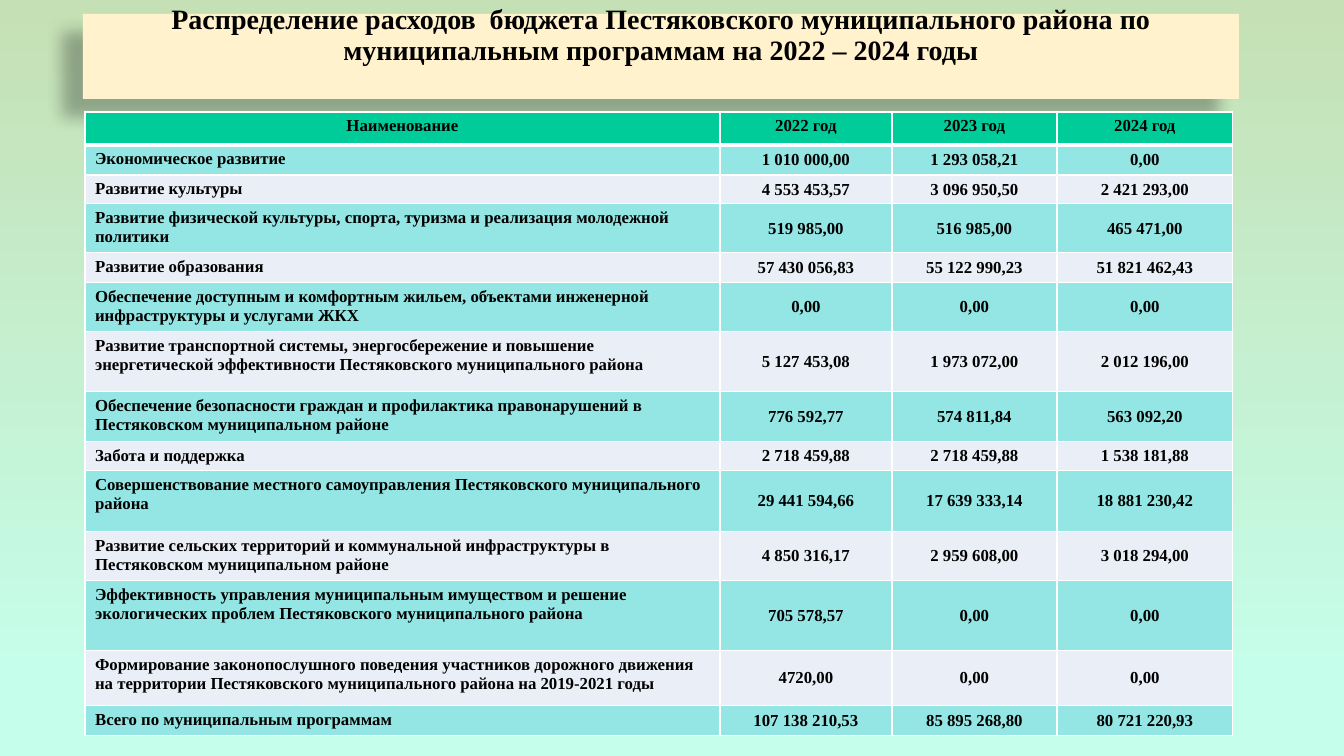
from lxml.etree import SubElement
from pptx import Presentation
from pptx.dml.color import RGBColor
from pptx.enum.shapes import MSO_SHAPE
from pptx.enum.text import MSO_ANCHOR, PP_ALIGN
from pptx.oxml.ns import qn
from pptx.util import Pt

SLIDE_W, SLIDE_H = 1344, 756
SCALE = 12192000 / SLIDE_W

FONT = {"name": "Times New Roman", "bold": True}
TITLE_FONT = {**FONT, "size": Pt(20)}
CELL_FONT = {**FONT, "size": Pt(12)}
TITLE_FORMAT = {"alignment": PP_ALIGN.CENTER, "line_spacing": 0.9}
NAME_FORMAT = {"alignment": PP_ALIGN.LEFT}
CENTER_FORMAT = {"alignment": PP_ALIGN.CENTER}

HEADER_FILL, ODD_FILL, EVEN_FILL = "00CC99", "94E6E4", "EAEFF7"

TITLE = ("Распределение расходов  бюджета Пестяковского муниципального района "
         "по муниципальным программам на 2022 – 2024 годы")

COL_WIDTHS = [635, 172, 165, 176]
# Row height in px, then the cell texts
ROWS = [
    (33, "Наименование", "2022 год", "2023 год", "2024 год"),
    (30, "Экономическое развитие", "1 010 000,00", "1 293 058,21", "0,00"),
    (29, "Развитие культуры", "4 553 453,57", "3 096 950,50", "2 421 293,00"),
    (49, "Развитие физической культуры, спорта, туризма и реализация молодежной политики",
     "519 985,00", "516 985,00", "465 471,00"),
    (30, "Развитие образования", "57 430 056,83", "55 122 990,23", "51 821 462,43"),
    (49, "Обеспечение доступным и комфортным жильем, объектами инженерной "
         "инфраструктуры и услугами ЖКХ", "0,00", "0,00", "0,00"),
    (60, "Развитие транспортной системы, энергосбережение и повышение энергетической "
         "эффективности Пестяковского муниципального района",
     "5 127 453,08", "1 973 072,00", "2 012 196,00"),
    (50, "Обеспечение безопасности граждан и профилактика правонарушений в "
         "Пестяковском муниципальном районе", "776 592,77", "574 811,84", "563 092,20"),
    (29, "Забота и поддержка", "2 718 459,88", "2 718 459,88", "1 538 181,88"),
    (61, "Совершенствование местного самоуправления Пестяковского муниципального района",
     "29 441 594,66", "17 639 333,14", "18 881 230,42"),
    (49, "Развитие сельских территорий и коммунальной инфраструктуры в "
         "Пестяковском муниципальном районе", "4 850 316,17", "2 959 608,00", "3 018 294,00"),
    (70, "Эффективность управления муниципальным имуществом и решение экологических "
         "проблем Пестяковского муниципального района", "705 578,57", "0,00", "0,00"),
    (55, "Формирование законопослушного поведения участников дорожного движения на "
         "территории Пестяковского муниципального района на 2019-2021 годы",
     "4720,00", "0,00", "0,00"),
    (30, "Всего по муниципальным программам",
     "107 138 210,53", "85 895 268,80", "80 721 220,93"),
]


def px(n):
    return round(n * SCALE)


def color(hex_code):
    return RGBColor.from_string(hex_code)


def apply(target, values):
    for name, value in values.items():
        setattr(target, name, value)


def write(tf, text, para_format, font_format):
    p = tf.paragraphs[0]
    apply(p, para_format)
    r = p.add_run()
    r.text = text
    apply(r.font, font_format)
    r.font.color.rgb = color("000000")


def set_background(s):
    fill = s.background.fill
    fill.gradient()
    fill.gradient_angle = 270
    for stop, (position, code) in zip(fill.gradient_stops, [(0, "C5E0B4"), (0.93, "C5FFEC")]):
        stop.position = position
        stop.color.rgb = color(code)


def add_shadow(sp, blur, dist, angle, alpha):
    sp.shadow.inherit = False
    effects = sp._element.spPr.find(qn("a:effectLst"))
    shadow = SubElement(effects, qn("a:outerShdw"), blurRad=str(Pt(blur)), dist=str(Pt(dist)),
                        dir=str(angle * 60000), algn="ctr", rotWithShape="0")
    clr = SubElement(shadow, qn("a:srgbClr"), val="000000")
    SubElement(clr, qn("a:alpha"), val=str(alpha * 1000))


def add_title(s, x, y, w, h):
    sp = s.shapes.add_shape(MSO_SHAPE.RECTANGLE, px(x), px(y), px(w), px(h))
    sp.fill.solid()
    sp.fill.fore_color.rgb = color("FFF2CC")
    sp.line.fill.background()
    add_shadow(sp, blur=11.8, dist=19.7, angle=141, alpha=28)
    tf = sp.text_frame
    apply(tf, {"word_wrap": True, "vertical_anchor": MSO_ANCHOR.MIDDLE,
               "margin_top": px(5), "margin_bottom": px(46)})
    write(tf, TITLE, TITLE_FORMAT, TITLE_FONT)


def add_borders(cell, widths):
    tc_pr = cell._tc.get_or_add_tcPr()
    for side, width in widths.items():
        ln = SubElement(tc_pr, qn(f"a:ln{side}"), w=str(Pt(width)))
        fill = SubElement(ln, qn("a:solidFill"))
        SubElement(fill, qn("a:srgbClr"), val="FFFFFF")


def fill_cell(cell, text, row, col):
    is_header = row == 0
    add_borders(cell, {"L": 1, "R": 1, "T": 3 if row == 1 else 1, "B": 3 if is_header else 1})
    cell.fill.solid()
    band = ODD_FILL if row % 2 else EVEN_FILL
    cell.fill.fore_color.rgb = color(HEADER_FILL if is_header else band)
    is_value = col > 0 and not is_header
    cell.vertical_anchor = MSO_ANCHOR.MIDDLE if is_value else MSO_ANCHOR.TOP
    para_format = CENTER_FORMAT if is_header or is_value else NAME_FORMAT
    write(cell.text_frame, text, para_format, CELL_FONT)


def add_budget_table(s, x, y):
    heights = [row[0] for row in ROWS]
    frame = s.shapes.add_table(len(ROWS), len(COL_WIDTHS), px(x), px(y),
                               px(sum(COL_WIDTHS)), px(sum(heights)))
    table = frame.table
    apply(table, {"first_row": False, "horz_banding": False})
    for column, width in zip(table.columns, COL_WIDTHS):
        column.width = px(width)
    for i, (height, *texts) in enumerate(ROWS):
        table.rows[i].height = px(height)
        for j, text in enumerate(texts):
            fill_cell(table.cell(i, j), text, i, j)


def main():
    prs = Presentation()
    prs.slide_width, prs.slide_height = px(SLIDE_W), px(SLIDE_H)
    s = prs.slides.add_slide(prs.slide_layouts[6])
    set_background(s)
    # Title band
    add_title(s, 83, 14, 1156, 85)
    # Spending by programme
    add_budget_table(s, 85, 112)
    prs.save("out.pptx")


if __name__ == "__main__":
    main()
